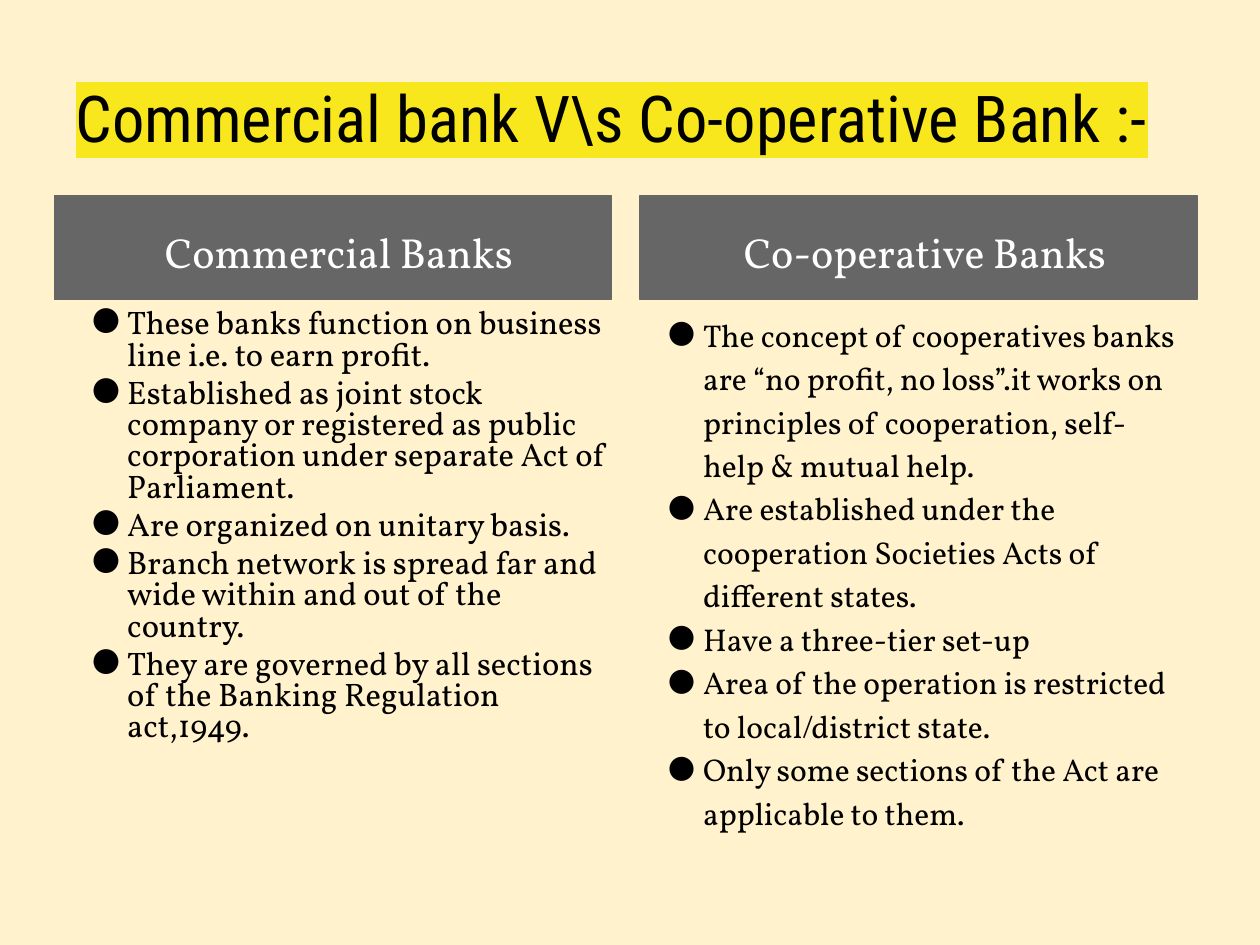
from lxml.etree import SubElement as Sub, Element
from pptx import Presentation
from pptx.dml.color import RGBColor as RGB
from pptx.enum.text import MSO_ANCHOR as Anchor, MSO_AUTO_SIZE as Fit, PP_ALIGN as Align
from pptx.oxml.ns import qn
from pptx.util import Inches, Pt

SERIF = "Vollkorn"
LEFT = [
    "These banks function on business line i.e. to earn profit.",
    "Established as joint stock company or registered as public corporation "
    "under separate Act of Parliament.",
    "Are organized on unitary basis.",
    "Branch network is spread far and wide within and out of the country.",
    "They are governed by all sections of the Banking Regulation act,1949.",
]
RIGHT = [
    "The concept of cooperatives banks are “no profit, no loss”.it works on "
    "principles of cooperation, self-help & mutual help.",
    "Are established under the cooperation Societies Acts of different states.",
    "Have a three-tier set-up",
    "Area of the operation is restricted to local/district state.",
    "Only some sections of the Act are applicable to them.",
]


def paint(fill, color):
    fill.solid()
    fill.fore_color.rgb = RGB.from_string(color)


def place(shape, x, y, w, h, anchor, inset=0.1):
    shape.left, shape.top = Inches(x), Inches(y)
    shape.width, shape.height = Inches(w), Inches(h)
    frame = shape.text_frame
    frame.auto_size = Fit.NONE
    frame.word_wrap = True
    frame.vertical_anchor = anchor
    frame.margin_left, frame.margin_right = Inches(inset), Inches(0.1)
    frame.margin_top = frame.margin_bottom = Inches(0.05)
    return frame


def write(para, text, size, face, color, align=Align.LEFT, lines=1.0, before=0):
    para.alignment = align
    para.line_spacing = lines
    para.space_before = Pt(before)
    run = para.add_run()
    run.text = text
    font = run.font
    font.size, font.name, font.bold = Pt(size), face, False
    paint(font.fill, color)
    return run


def mark(run, color):
    tint = Element(qn("a:highlight"))
    Sub(tint, qn("a:srgbClr"), val=color)
    run.font.fill
    run._r.rPr.find(qn("a:latin")).addprevious(tint)


def dot(para, color):
    props = para._p.get_or_add_pPr()
    props.set("marL", str(Inches(0.4)))
    props.set("indent", str(Inches(-0.28)))
    Sub(Sub(props, qn("a:buClr")), qn("a:srgbClr"), val=color)
    Sub(props, qn("a:buFont"), typeface=SERIF)
    Sub(props, qn("a:buChar"), char="●")


def title(shape, text):
    frame = place(shape, 0.5, 0.3, 9, 1.25, Anchor.MIDDLE)
    run = write(frame.paragraphs[0], text, 36.9, "Roboto Condensed", "000000")
    mark(run, "F8E71C")


def header(shape, x, text):
    frame = place(shape, x, 1.55, 4.42, 0.83, Anchor.MIDDLE, 0.2)
    paint(shape.fill, "666666")
    paint(shape.line.fill, "666666")
    shape.line.width = Pt(0.75)
    write(frame.paragraphs[0], text, 24, SERIF, "FFFFFF", Align.CENTER, 1.15)


def points(shape, x, items, size, lines, gap):
    frame = place(shape, x, 2.41, 4.42, 4.31, Anchor.TOP)
    for i, text in enumerate(items):
        para = frame.add_paragraph() if i else frame.paragraphs[0]
        write(para, text, size, SERIF, "000000", lines=lines, before=gap if i else 0)
        dot(para, "000000")


def main():
    deck = Presentation()
    deck.slide_width, deck.slide_height = Inches(10), Inches(7.5)
    slide = deck.slides.add_slide(deck.slide_layouts[4])
    paint(slide.background.fill, "FFF2CC")
    head, name_l, list_l, name_r, list_r = slide.placeholders
    title(head, "Commercial bank V\\s Co-operative Bank :-")
    header(name_l, 0.43, "Commercial Banks")
    header(name_r, 5.08, "Co-operative Banks")
    points(list_l, 0.51, LEFT, 18.6, 0.8, 4)
    points(list_r, 5.08, RIGHT, 18, 1.15, 0)
    deck.save("out.pptx")


if __name__ == "__main__":
    main()
